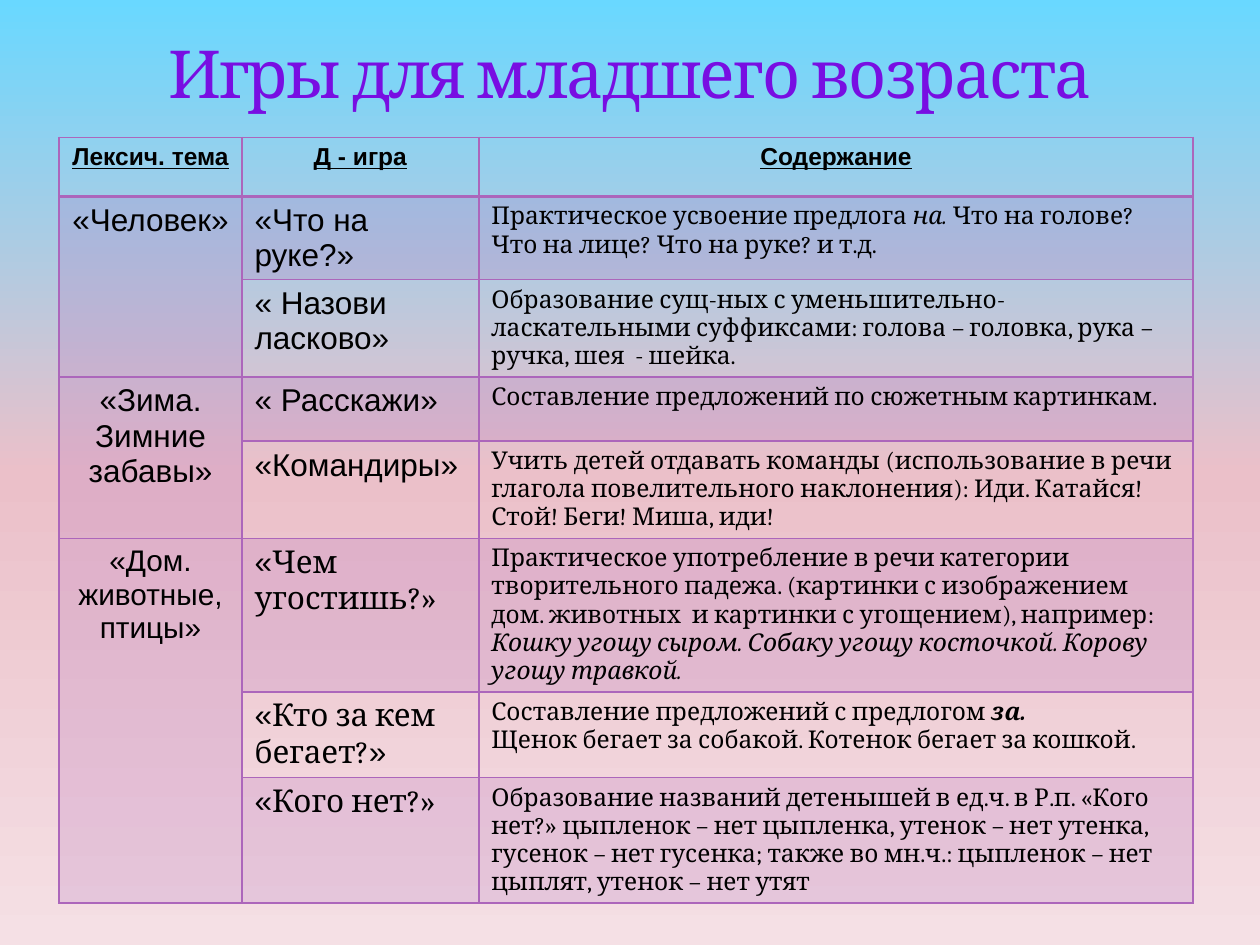
from lxml import etree
from copy import deepcopy
from pptx import Presentation
from pptx.dml.color import RGBColor
from pptx.enum.text import MSO_ANCHOR, PP_ALIGN
from pptx.oxml.ns import qn
from pptx.util import Inches, Pt

CENTER, LEFT = PP_ALIGN.CENTER, PP_ALIGN.LEFT
BOTTOM = MSO_ANCHOR.BOTTOM

COLORS = {"title": "780EE2", "outline": "9C3888", "line": "AC66BB",
          "band": "AC66BB", "text": "000000"}
BACKGROUND = [(0, "69D8FF"), (50, "EBC0C9"), (100, "F5E0E5")]
SANS, SERIF = "Arial", "Cambria"
HEADER = {"size": 14, "bold": True, "underline": True}
NAME = {"size": 18}
SERIF_NAME = {"size": 18, "font": SERIF}
BODY = {"size": 14, "font": SERIF}
ITALIC = {**BODY, "italic": True}

TITLE = "Игры для младшего возраста"
HEADERS = ["Лексич. тема", "Д - игра", "Содержание"]
THEMES = [("«Человек»", 18, 2), ("«Зима. Зимние забавы»", 18, 2),
          ("«Дом. животные, птицы»", 17, 3)]
GAMES = [
    ([("«Что на руке?»", NAME)],
     [[("Практическое усвоение предлога ", BODY), ("на.", ITALIC),
       (" Что на голове? Что на лице? Что на руке? и т.д.", BODY)]]),
    ([("« Назови ласково»", NAME)],
     [[("Образование сущ-ных с уменьшительно-ласкательными суффиксами: "
        "голова – головка, рука – ручка, шея  - шейка.", BODY)]]),
    ([("« Расскажи»", NAME)],
     [[("Составление предложений по сюжетным картинкам.", BODY)]]),
    ([("«Командиры»", NAME)],
     [[("Учить детей отдавать команды (использование в речи глагола "
        "повелительного наклонения): Иди. Катайся! Стой! Беги! Миша, иди!", BODY)]]),
    ([("«", NAME), ("Чем угостишь?»", SERIF_NAME)],
     [[("Практическое употребление в речи категории творительного падежа. "
        "(картинки с изображением дом. животных  и картинки с угощением), "
        "например: ", BODY),
       ("Кошку угощу сыром. Собаку угощу косточкой. Корову угощу травкой.", ITALIC)]]),
    ([("«", NAME), ("Кто за кем бегает?", SERIF_NAME), ("»", NAME)],
     [[("Составление предложений с предлогом ", BODY),
       ("за.", {**ITALIC, "bold": True})],
      [("Щенок бегает за собакой. Котенок бегает за кошкой.", BODY)]]),
    ([("«", NAME), ("Кого нет?»", SERIF_NAME)],
     [[("Образование названий детенышей в ед.ч. в Р.п. «Кого нет?» цыпленок – "
        "нет цыпленка, утенок – нет утенка, гусенок – нет гусенка; также во "
        "мн.ч.: цыпленок – нет цыплят, утенок – нет утят", BODY)]]),
]
BANDED_ROWS = {1, 3, 5, 7}
COLS = [1.45, 1.88, 5.67]
ROWS = [0.47, 0.63, 0.74, 0.51, 0.59, 0.62, 0.62, 0.74]


def add_run(p, text, size=18, font=SANS, color="text", bold=False, italic=False,
            underline=False):
    r = p.add_run()
    r.text = text
    f = r.font
    f.size, f.name = Pt(size), font
    f.bold, f.italic, f.underline = bold, italic, underline
    f.color.rgb = RGBColor.from_string(COLORS[color])
    return r


def fill_text(cell, paragraphs, align=LEFT):
    tf = cell.text_frame
    for i, runs in enumerate(paragraphs):
        p = tf.add_paragraph() if i else tf.paragraphs[0]
        p.alignment = align
        for text, fmt in runs:
            add_run(p, text, **fmt)


def solid(parent, color, alpha=100):
    fill = etree.SubElement(parent, qn("a:solidFill"))
    clr = etree.SubElement(fill, qn("a:srgbClr"), val=COLORS[color])
    if alpha < 100:
        etree.SubElement(clr, qn("a:alpha"), val=str(alpha * 1000))


def style_cell(cell, row, banded):
    tc_pr = cell._tc.get_or_add_tcPr()
    for side in "LRTB":
        heavy = (row, side) in {(0, "B"), (1, "T")}
        ln = etree.SubElement(tc_pr, qn("a:ln" + side), w=str(Pt(2 if heavy else 1)))
        solid(ln, "line")
    if banded:
        solid(tc_pr, "band", 20)
    else:
        etree.SubElement(tc_pr, qn("a:noFill"))


def set_background(slide):
    fill = slide.background.fill
    fill.gradient()
    fill.gradient_angle = 270
    stops = slide._element.find(".//" + qn("a:gsLst"))
    stops.append(deepcopy(stops[0]))
    for stop, (position, color) in zip(fill.gradient_stops, BACKGROUND):
        stop.position = position / 100
        stop.color.rgb = RGBColor.from_string(color)


def add_title(slide):
    sp = slide.shapes.title
    sp.left, sp.top, sp.width, sp.height = map(Inches, (0.5, 0.17, 9, 0.77))
    tf = sp.text_frame
    tf.vertical_anchor = BOTTOM
    p = tf.paragraphs[0]
    p.alignment = CENTER
    r_pr = add_run(p, TITLE, size=37.8, font=SERIF, color="title")._r.get_or_add_rPr()
    r_pr.set("spc", "-100")
    ln = etree.Element(qn("a:ln"), w=str(Pt(0.25)))
    solid(ln, "outline", 25)
    r_pr.insert(0, ln)


def add_games_table(slide):
    frame = slide.shapes.add_table(len(ROWS), len(COLS), Inches(0.47), Inches(1.09),
                                   Inches(sum(COLS)), Inches(5.91))
    table = frame.table
    table.first_row = table.horz_banding = False
    for col, width in zip(table.columns, COLS):
        col.width = Inches(width)
    for row, height in zip(table.rows, ROWS):
        row.height = Inches(height)
    frame.height = Inches(5.91)
    for i in range(len(ROWS)):
        for j in range(len(COLS)):
            style_cell(table.cell(i, j), i, i > 0 and (j == 0 or i in BANDED_ROWS))
    for j, text in enumerate(HEADERS):
        fill_text(table.cell(0, j), [[(text, HEADER)]], CENTER)
    for i, (name, content) in enumerate(GAMES, 1):
        fill_text(table.cell(i, 1), [name])
        fill_text(table.cell(i, 2), content)
    top = 1
    for text, size, span in THEMES:
        cell = table.cell(top, 0)
        cell.merge(table.cell(top + span - 1, 0))
        fill_text(cell, [[(text, {"size": size})]], CENTER)
        top += span


def main():
    prs = Presentation()
    prs.slide_width, prs.slide_height = Inches(10), Inches(7.5)
    slide = prs.slides.add_slide(prs.slide_layouts[5])
    set_background(slide)
    add_title(slide)
    add_games_table(slide)
    prs.save("out.pptx")


if __name__ == "__main__":
    main()
